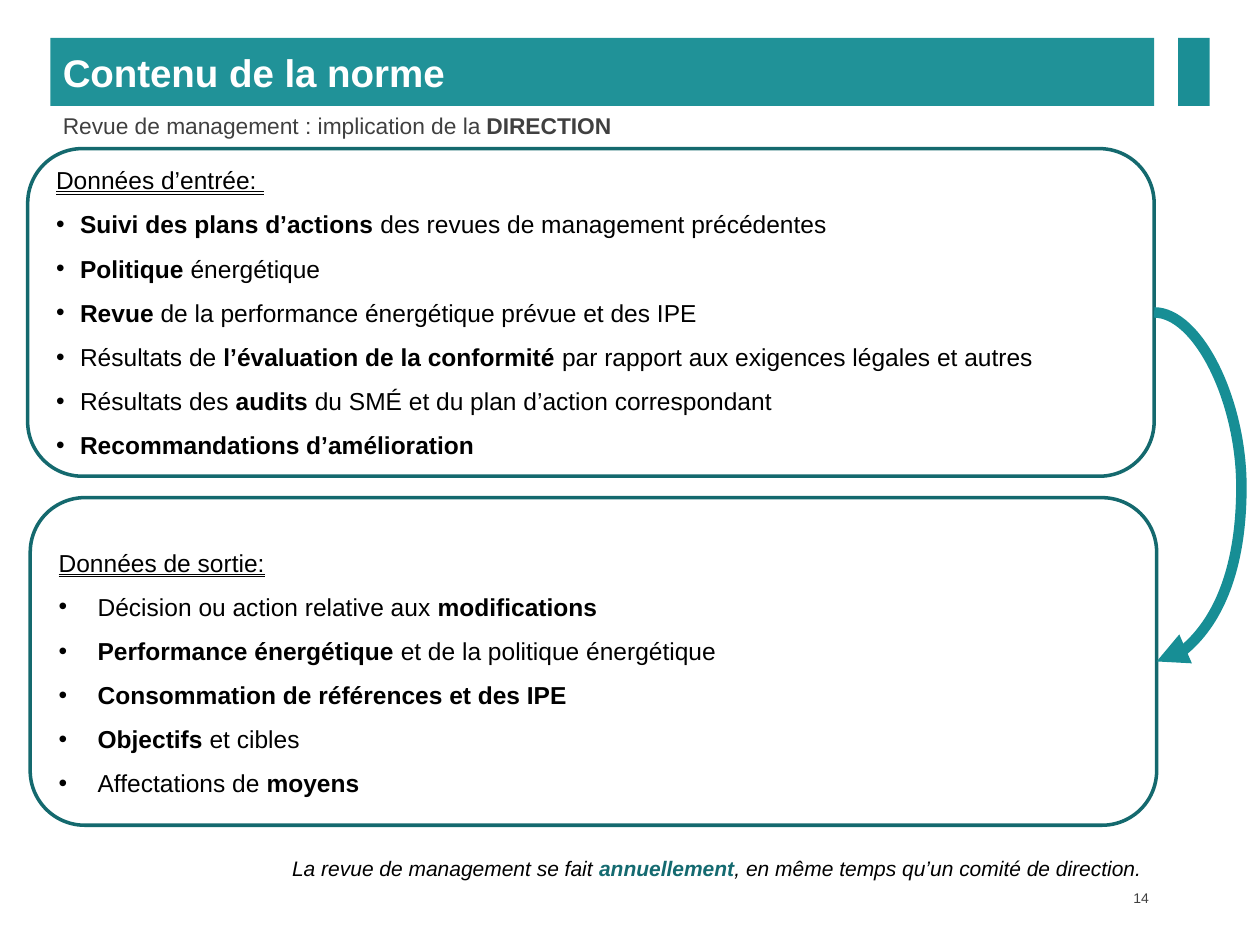
import pptx
import pptx.util
from lxml import etree
from pptx.dml.color import RGBColor
from pptx.enum.shapes import MSO_CONNECTOR, MSO_SHAPE
from pptx.enum.text import MSO_ANCHOR, MSO_TEXT_UNDERLINE_TYPE, PP_ALIGN
from pptx.oxml.ns import qn
from pptx.util import Inches

BLACK = RGBColor(0x00, 0x00, 0x00)
WHITE = RGBColor(0xFF, 0xFF, 0xFF)
GREY = RGBColor(0x40, 0x40, 0x40)
TITLE_TEAL = RGBColor(0x20, 0x92, 0x98)
ACCENT_TEAL = RGBColor(0x1B, 0x8E, 0x95)
ARROW_TEAL = RGBColor(0x17, 0x8E, 0x95)
DARK_TEAL = RGBColor(0x14, 0x69, 0x6E)
WORD_TEAL = RGBColor(0x14, 0x6A, 0x70)

INPUTS = [
    "*Suivi des plans d’actions *des revues de management précédentes",
    "*Politique *énergétique",
    "*Revue *de la performance énergétique prévue et des IPE",
    "Résultats de *l’évaluation de la conformité *par rapport aux exigences légales et autres",
    "Résultats des *audits *du SMÉ et du plan d’action correspondant",
    "*Recommandations d’amélioration*",
]
OUTPUTS = [
    "Décision ou action relative aux *modifications*",
    "*Performance énergétique *et de la politique énergétique",
    "*Consommation de références et des IPE*",
    "*Objectifs *et cibles",
    "Affectations de *moyens*",
]


class SlideBuilder:
    """Holds the style and the current slide."""

    font_name = "Arial"

    def __init__(self, slide):
        self.slide = slide

    def add_runs(self, paragraph, text, size, color, bold_color=None):
        """Add text in which *stars* enclose the bold parts."""
        for index, part in enumerate(text.split("*")):
            if not part:
                continue
            run = paragraph.add_run()
            run.text = part
            bold = index % 2 == 1
            run.font.name = self.font_name
            run.font.size = pptx.util.Pt(size)
            run.font.bold = bold
            run.font.color.rgb = bold_color if bold and bold_color else color

    def label(self, left, top, width, height, text, size, color, bold_color=None,
              anchor=MSO_ANCHOR.MIDDLE, align=PP_ALIGN.LEFT):
        box = self.slide.shapes.add_textbox(
            Inches(left), Inches(top), Inches(width), Inches(height))
        frame = box.text_frame
        frame.word_wrap = True
        frame.vertical_anchor = anchor
        frame.paragraphs[0].alignment = align
        self.add_runs(frame.paragraphs[0], text, size, color, bold_color)
        return frame

    def shape(self, kind, left, top, width, height, fill=None, line=None):
        shape = self.slide.shapes.add_shape(
            kind, Inches(left), Inches(top), Inches(width), Inches(height))
        shape.shadow.inherit = False
        if fill is None:
            shape.fill.background()
        else:
            shape.fill.solid()
            shape.fill.fore_color.rgb = fill
        if line is None:
            shape.line.fill.background()
        else:
            shape.line.color.rgb = line
            shape.line.width = pptx.util.Pt(2)
        return shape

    def bullet(self, paragraph, indent):
        properties = paragraph._p.get_or_add_pPr()
        properties.set("marL", str(Inches(indent)))
        properties.set("indent", str(-Inches(indent)))
        paragraph.line_spacing = 1.5
        etree.SubElement(properties, qn("a:buFont")).set("typeface", self.font_name)
        etree.SubElement(properties, qn("a:buChar")).set("char", "•")

    def panel(self, left, top, heading, items, indent):
        panel = self.shape(MSO_SHAPE.ROUNDED_RECTANGLE, left, top, 8.94, 2.6, line=DARK_TEAL)
        frame = panel.text_frame
        frame.vertical_anchor = MSO_ANCHOR.MIDDLE
        title = frame.paragraphs[0]
        title.alignment = PP_ALIGN.LEFT
        self.add_runs(title, heading, 14, BLACK)
        title.runs[0].font.underline = MSO_TEXT_UNDERLINE_TYPE.DOUBLE_LINE
        for item in items:
            paragraph = frame.add_paragraph()
            paragraph.alignment = PP_ALIGN.LEFT
            self.bullet(paragraph, indent)
            self.add_runs(paragraph, item, 14, BLACK)
        return frame

    def curved_arrow(self, start, end, bulge):
        arrow = self.slide.shapes.add_connector(
            MSO_CONNECTOR.CURVE, *(Inches(value) for value in start + end))
        arrow.line.color.rgb = ARROW_TEAL
        arrow.line.width = pptx.util.Pt(6)
        properties = arrow._element.spPr
        etree.SubElement(properties.find(qn("a:ln")), qn("a:tailEnd")).set("type", "triangle")
        etree.SubElement(properties, qn("a:effectLst"))
        # The bend is a share of the connector's width, in 1/100000
        geometry = properties.find(qn("a:prstGeom"))
        guide = etree.SubElement(geometry.find(qn("a:avLst")), qn("a:gd"))
        guide.set("name", "adj1")
        guide.set("fmla", f"val {round(bulge / (end[0] - start[0]) * 100000)}")


def main():
    presentation = pptx.Presentation()
    presentation.slide_width = Inches(10)
    presentation.slide_height = Inches(7.5)
    builder = SlideBuilder(presentation.slides.add_slide(presentation.slide_layouts[6]))

    # Page number and subtitle
    page_number = builder.label(8.6, 7.03, 0.56, 0.2, "14", 8, GREY, align=PP_ALIGN.RIGHT)
    page_number.margin_right = Inches(0.04)
    builder.label(0.4, 0.84, 9.19, 0.31,
                  "Revue de management : implication de la *DIRECTION*", 13, GREY)

    # Inputs and outputs of the review
    builder.panel(0.22, 1.18, "Données d’entrée: ", INPUTS, 0.19)
    outputs = builder.panel(0.24, 3.95, "Données de sortie:", OUTPUTS, 0.31)
    outputs.vertical_anchor = MSO_ANCHOR.TOP
    outputs.margin_top = Inches(0.27)
    builder.curved_arrow((9.16, 2.48), (9.18, 5.25), bulge=0.69)

    # Closing remark
    remark = builder.label(
        2.22, 6.74, 6.96, 0.3,
        "La revue de management se fait *annuellement*, en même temps qu’un comité de direction.",
        12, BLACK, bold_color=WORD_TEAL, anchor=MSO_ANCHOR.TOP)
    for run in remark.paragraphs[0].runs:
        run.font.italic = True

    # Title band
    band = builder.shape(MSO_SHAPE.RECTANGLE, 0.4, 0.3, 8.76, 0.54, fill=TITLE_TEAL)
    band.text_frame.vertical_anchor = MSO_ANCHOR.MIDDLE
    band.text_frame.paragraphs[0].alignment = PP_ALIGN.LEFT
    builder.add_runs(band.text_frame.paragraphs[0], "*Contenu de la norme*", 22, WHITE)
    builder.shape(MSO_SHAPE.RECTANGLE, 9.35, 0.3, 0.25, 0.54, fill=ACCENT_TEAL)

    presentation.save("out.pptx")


if __name__ == "__main__":
    main()
